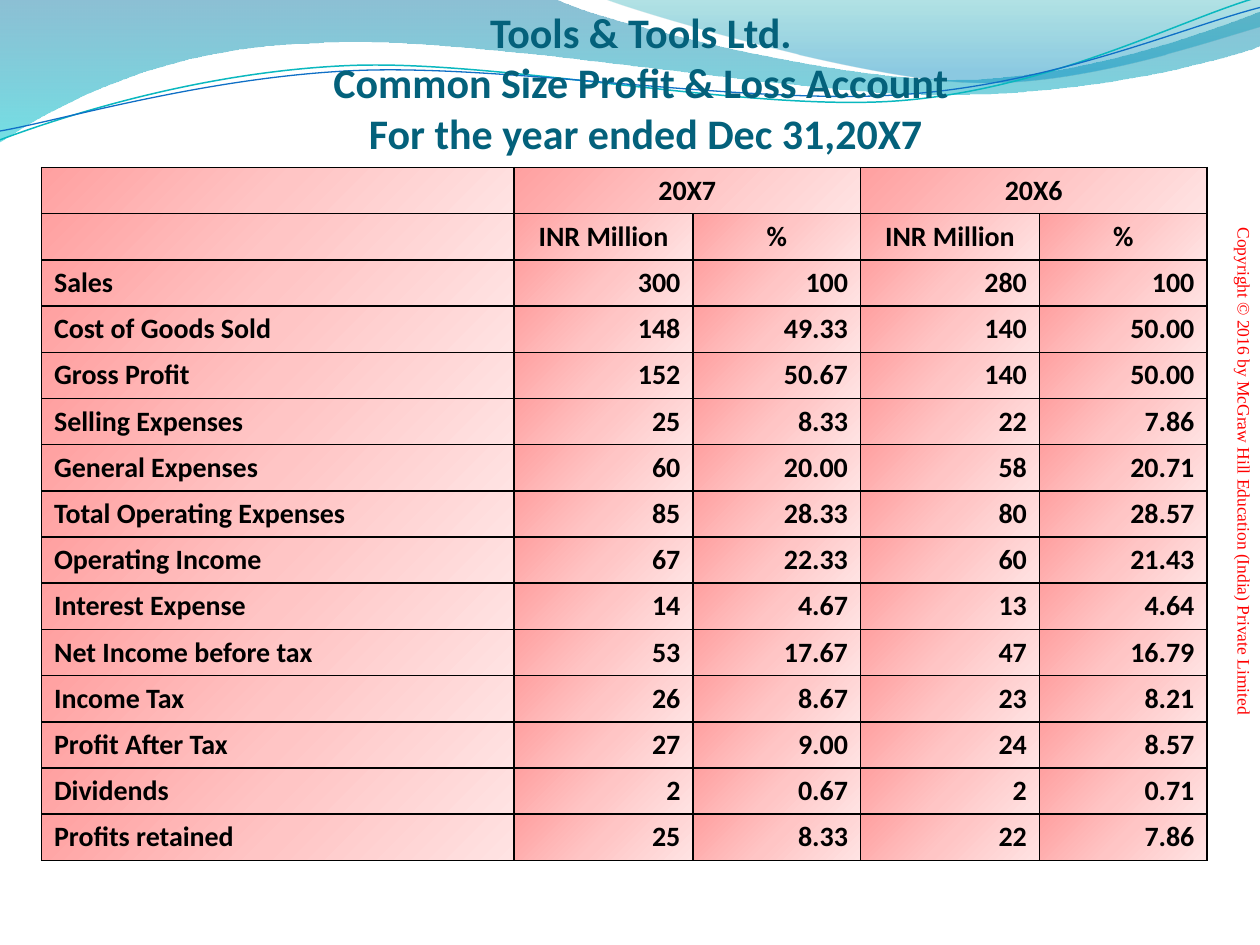
"""Build the common size profit and loss slide."""
from math import cos, radians, sin
from typing import NamedTuple

from lxml.etree import SubElement
from pptx import Presentation
from pptx.dml.color import RGBColor
from pptx.enum.text import MSO_ANCHOR, MSO_AUTO_SIZE, PP_ALIGN
from pptx.oxml import parse_xml
from pptx.oxml.ns import nsdecls, qn
from pptx.util import Inches, Pt


class Stop(NamedTuple):
    pos: int
    color: str
    alpha: int = 100


class Curve(NamedTuple):
    start: tuple
    steps: tuple
    stops: tuple = ()
    line: str = ""
    width: float = 0
    center: tuple = (0, 0)
    tilt: float = 0


CURVES = (
    Curve((0, 0), (
        (4.4, -0.01), (4.76, 0.17, 6.64, 0.63, 7.58, 0.63),
        (8.53, 0.63, 9.58, 0.26, 10, 0.09), (10.01, 0.36),
        (9.83, 0.44, 8.7, 0.76, 7.46, 0.75), (6.22, 0.75, 3.82, 0.28, 2.57, 0.34),
        (1.29, 0.36, 0.46, 0.83, -0.01, 1.13), (0, 0)),
        stops=(Stop(0, "0074A1", 45), Stop(100, "00C6CF", 55))),
    Curve((4.79, -0.01), (
        (5.09, 0.11, 6.82, 0.62, 7.69, 0.65), (8.56, 0.69, 9.61, 0.32, 10, 0.21),
        (10, 0), (4.79, -0.01)),
        stops=(Stop(0, "00A1A9", 30), Stop(80, "008BBF", 45))),
    Curve((0, 1.11), (
        (0.48, 0.93, 1.58, 0.57, 2.77, 0.52), (3.95, 0.47, 5.93, 0.89, 7.13, 0.8),
        (8.33, 0.71, 9.38, 0.15, 9.98, -0.02)),
        line="0AB8BF", width=0.85, center=(4.99, 0.58), tilt=-2.7),
    Curve((0, 1.04), (
        (0.47, 0.96, 1.64, 0.61, 2.83, 0.56), (4.03, 0.51, 5.97, 0.84, 7.17, 0.75),
        (8.36, 0.67, 9.41, 0.21, 10, 0.06)),
        line="0F6FC6", width=0.75, center=(5, 0.59), tilt=-2.7),
)
CELL_STOPS = (Stop(0, "FFA0A0"), Stop(50, "FFC5C5"), Stop(100, "FFE3E3"))
TITLE = ("Tools & Tools Ltd. ", "Common Size Profit & Loss Account ",
         "For the year ended Dec 31,20X7")
COLUMNS = (3.75, 1.42, 1.33, 1.42, 1.33)
ROWS = (
    ("", "20X7", "", "20X6", ""),
    ("", "INR Million", "%", "INR Million", "%"),
    ("Sales", "300", "100", "280", "100"),
    ("Cost of Goods Sold", "148", "49.33", "140", "50.00"),
    ("Gross Profit", "152", "50.67", "140", "50.00"),
    ("Selling Expenses", "25", "8.33", "22", "7.86"),
    ("General Expenses", "60", "20.00", "58", "20.71"),
    ("Total Operating Expenses", "85", "28.33", "80", "28.57"),
    ("Operating Income", "67", "22.33", "60", "21.43"),
    ("Interest Expense", "14", "4.67", "13", "4.64"),
    ("Net Income before tax", "53", "17.67", "47", "16.79"),
    ("Income Tax", "26", "8.67", "23", "8.21"),
    ("Profit After Tax", "27", "9.00", "24", "8.57"),
    ("Dividends", "2", "0.67", "2", "0.71"),
    ("Profits retained", "25", "8.33", "22", "7.86"),
)


def rgb(value: str) -> RGBColor:
    return RGBColor.from_string(value)


def fill_gradient(fill, props, stops: tuple, angle: int) -> None:
    fill.background()
    grad = parse_xml(f'<a:gradFill {nsdecls("a")} rotWithShape="1"><a:gsLst/>'
                     f'<a:lin ang="{angle * 60000}" scaled="0"/></a:gradFill>')
    for stop in stops:
        gs = SubElement(grad[0], qn("a:gs"), pos=str(stop.pos * 1000))
        clr = SubElement(gs, qn("a:srgbClr"), val=stop.color)
        if stop.alpha < 100:
            SubElement(clr, qn("a:alpha"), val=str(stop.alpha * 1000))
    props.replace(props.find(qn("a:noFill")), grad)


def level(point: tuple, curve: Curve) -> tuple:
    angle = radians(-curve.tilt)
    cx, cy = curve.center
    dx, dy = point[0] - cx, point[1] - cy
    return (Inches(cx + dx * cos(angle) - dy * sin(angle)),
            Inches(cy + dx * sin(angle) + dy * cos(angle)))


def bend(outline, steps: tuple) -> None:
    lines = iter(outline.findall(qn("a:lnTo")))
    for step in steps:
        group = [next(lines) for _ in range(len(step) // 2)]
        if len(group) == 3:
            bezier = parse_xml(f'<a:cubicBezTo {nsdecls("a")}/>')
            group[0].addprevious(bezier)
            for line in group:
                bezier.append(line[0])
                outline.remove(line)


def draw_curve(s, curve: Curve) -> None:
    points = [level(step[k:k + 2], curve)
              for step in curve.steps for k in range(0, len(step), 2)]
    builder = s.shapes.build_freeform(*level(curve.start, curve))
    builder.add_line_segments(points, close=bool(curve.stops))
    sp = builder.convert_to_shape()
    bend(next(sp.element.iter(qn("a:path"))), curve.steps)
    sp.rotation = curve.tilt
    sp.shadow.inherit = False
    if curve.stops:
        fill_gradient(sp.fill, sp.element.spPr, curve.stops, 90)
        sp.line.fill.background()
    else:
        sp.fill.background()
        sp.line.color.rgb = rgb(curve.line)
        sp.line.width = Pt(curve.width)


def write(p, text: str, size: int, color: str, align, font: str = "Calibri",
          bold: bool = True) -> None:
    p.alignment = align
    r = p.add_run()
    r.text = text
    r.font.size = Pt(size)
    r.font.name = font
    r.font.bold = bold
    r.font.color.rgb = rgb(color)


def draw_copyright(s) -> None:
    sp = s.shapes.add_textbox(Inches(6.83), Inches(3.49), Inches(6.33), Inches(0.5))
    sp.rotation = 90
    tf = sp.text_frame
    tf.word_wrap = True
    tf.vertical_anchor = MSO_ANCHOR.BOTTOM
    write(tf.paragraphs[0],
          "Copyright © 2016 by McGraw Hill Education (India) Private Limited",
          10, "FF0000", PP_ALIGN.CENTER, "Times New Roman", False)


def style_cell(cell) -> None:
    cell.margin_top = cell.margin_bottom = Inches(0.04)
    cell.vertical_anchor = MSO_ANCHOR.MIDDLE
    props = cell._tc.get_or_add_tcPr()
    for side in ("lnL", "lnR", "lnT", "lnB"):
        props.append(parse_xml(
            f'<a:{side} {nsdecls("a")} w="12700"><a:solidFill>'
            f'<a:srgbClr val="000000"/></a:solidFill></a:{side}>'))
    fill_gradient(cell.fill, props, CELL_STOPS, 45)


def draw_table(s) -> None:
    table = s.shapes.add_table(len(ROWS), len(COLUMNS), Inches(0.33), Inches(1.33),
                               Inches(sum(COLUMNS)), Inches(5.5)).table
    table.first_row = table.horz_banding = False
    for column, width in zip(table.columns, COLUMNS):
        column.width = Inches(width)
    for i, row in enumerate(ROWS):
        for j, text in enumerate(row):
            cell = table.cell(i, j)
            style_cell(cell)
            p = cell.text_frame.paragraphs[0]
            if text:
                align = (PP_ALIGN.CENTER if i < 2 else
                         PP_ALIGN.RIGHT if j else PP_ALIGN.LEFT)
                write(p, text, 16, "000000", align)
            else:
                SubElement(p._p, qn("a:endParaRPr"), sz="1600")
    for j in (1, 3):
        table.cell(0, j).merge(table.cell(0, j + 1))


def draw_title(s) -> None:
    title = s.shapes.title
    title.left, title.top = Inches(0.25), Inches(0)
    title.width, title.height = Inches(9.75), Inches(1.31)
    tf = title.text_frame
    tf.word_wrap = True
    tf.auto_size = MSO_AUTO_SIZE.SHAPE_TO_FIT_TEXT
    tf.vertical_anchor = MSO_ANCHOR.TOP
    for i, text in enumerate(TITLE):
        p = tf.add_paragraph() if i else tf.paragraphs[0]
        write(p, text, 24, "04617B", PP_ALIGN.CENTER)
    title.element.getparent().append(title.element)


def main() -> None:
    prs = Presentation()
    prs.slide_width, prs.slide_height = Inches(10), Inches(7.5)
    s = prs.slides.add_slide(prs.slide_layouts[5])
    for curve in CURVES:
        draw_curve(s, curve)
    draw_copyright(s)
    draw_table(s)
    draw_title(s)
    prs.save("out.pptx")


if __name__ == "__main__":
    main()
